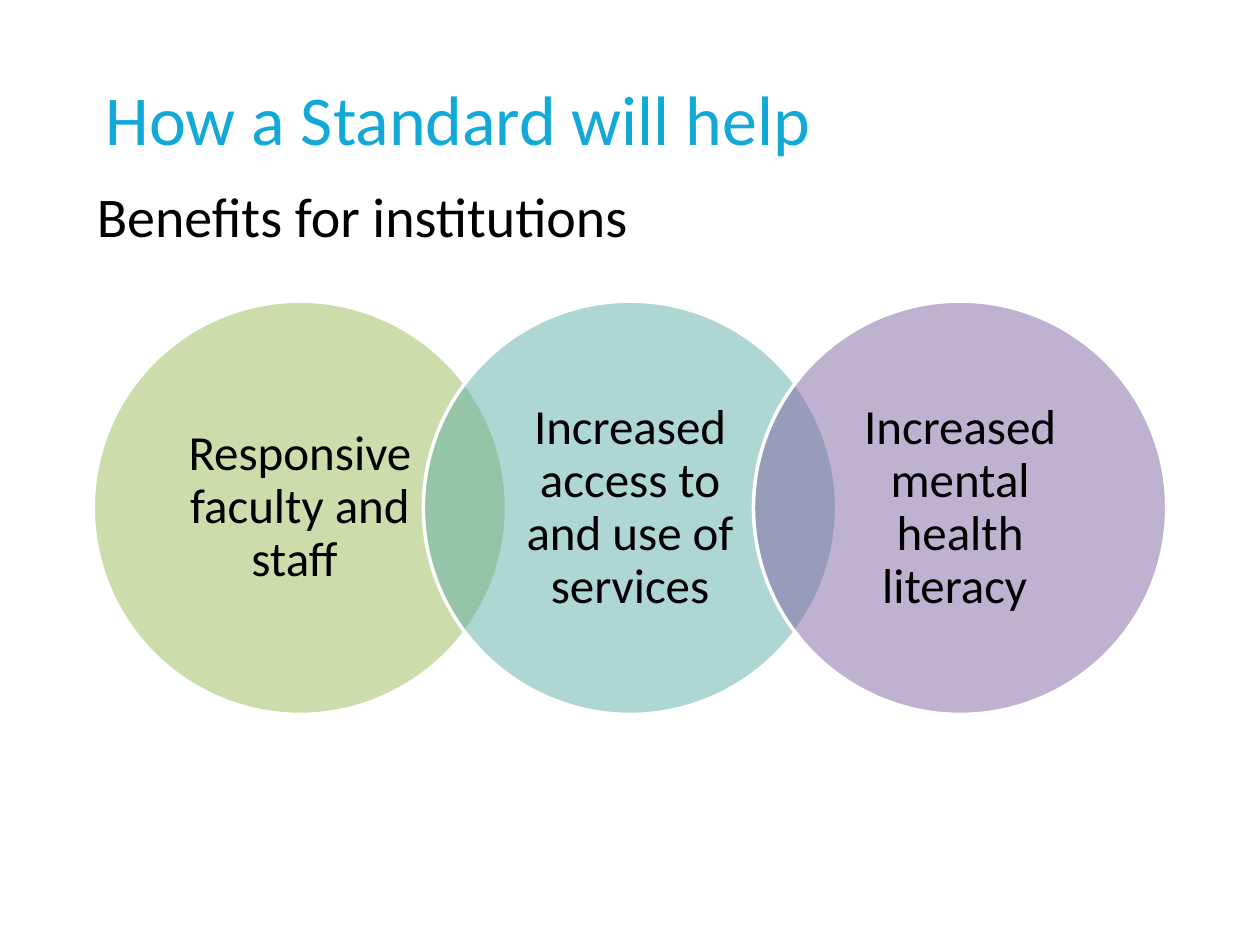
from lxml.etree import SubElement
from pptx import Presentation
from pptx.dml.color import RGBColor
from pptx.enum.shapes import MSO_SHAPE
from pptx.enum.text import MSO_ANCHOR, PP_ALIGN
from pptx.oxml.ns import qn
from pptx.util import Inches, Pt

COLORS = {
    "title": "12A9D9", "text": "000000", "outline": "FFFFFF",
    "green": "9BBB59", "teal": "5EAFA6", "purple": "8064A2",
}
FONT = "Calibri"
HEADINGS = [
    ("How a Standard will help", (0.74, 0.55, 7.55, 0.93), 40, "title", True),
    ("Benefits for institutions", (0.67, 1.39, 4.47, 0.64), 32, "text", False),
]
BENEFITS = [
    (["Responsive faculty and staff "], "green"),
    (["Increased access to and use of", "services"], "teal"),
    (["Increased mental health literacy "], "purple"),
]
LEFT, TOP, DIAMETER, STEP = 0.74, 2.39, 3.28, 2.62
LABEL_SIZE = 2.32
LABEL_INSET = (DIAMETER - LABEL_SIZE) / 2


def color(name):
    return RGBColor.from_string(COLORS[name])


def add_text(page, lines, place, size, color_name, wrap=True):
    box = page.shapes.add_textbox(*map(Inches, place))
    frame = box.text_frame
    frame.word_wrap = wrap
    paragraph = frame.paragraphs[0]
    for index, line in enumerate(lines):
        if index:
            paragraph.add_line_break()
        span = paragraph.add_run()
        span.text = line
        span.font.name = FONT
        span.font.size = Pt(size)
        span.font.color.rgb = color(color_name)
    return frame


def add_circle(page, left, fill_name):
    circle = page.shapes.add_shape(
        MSO_SHAPE.OVAL, Inches(left), Inches(TOP), Inches(DIAMETER), Inches(DIAMETER))
    circle.shadow.inherit = False
    circle.fill.solid()
    circle.fill.fore_color.rgb = color(fill_name)
    tint = circle.fill._xPr.find(qn("a:solidFill"))[0]
    SubElement(tint, qn("a:alpha"), val="50000")
    circle.line.color.rgb = color("outline")
    circle.line.width = Pt(2)


def add_label(page, left, lines):
    place = (left + LABEL_INSET, TOP + LABEL_INSET, LABEL_SIZE, LABEL_SIZE)
    frame = add_text(page, lines, place, 28, "text")
    frame.vertical_anchor = MSO_ANCHOR.MIDDLE
    frame.margin_left = frame.margin_right = Inches(0.18)
    frame.margin_top = frame.margin_bottom = Inches(0.04)
    paragraph = frame.paragraphs[0]
    paragraph.alignment = PP_ALIGN.CENTER
    paragraph.line_spacing = 0.9


def main():
    deck = Presentation()
    deck.slide_width, deck.slide_height = Inches(10), Inches(7.5)
    page = deck.slides.add_slide(deck.slide_layouts[6])
    for index, (lines, fill_name) in enumerate(BENEFITS):
        left = LEFT + index * STEP
        add_circle(page, left, fill_name)
        add_label(page, left, lines)
    for text, place, size, color_name, wrap in HEADINGS:
        add_text(page, [text], place, size, color_name, wrap)
    deck.save("out.pptx")


if __name__ == "__main__":
    main()
